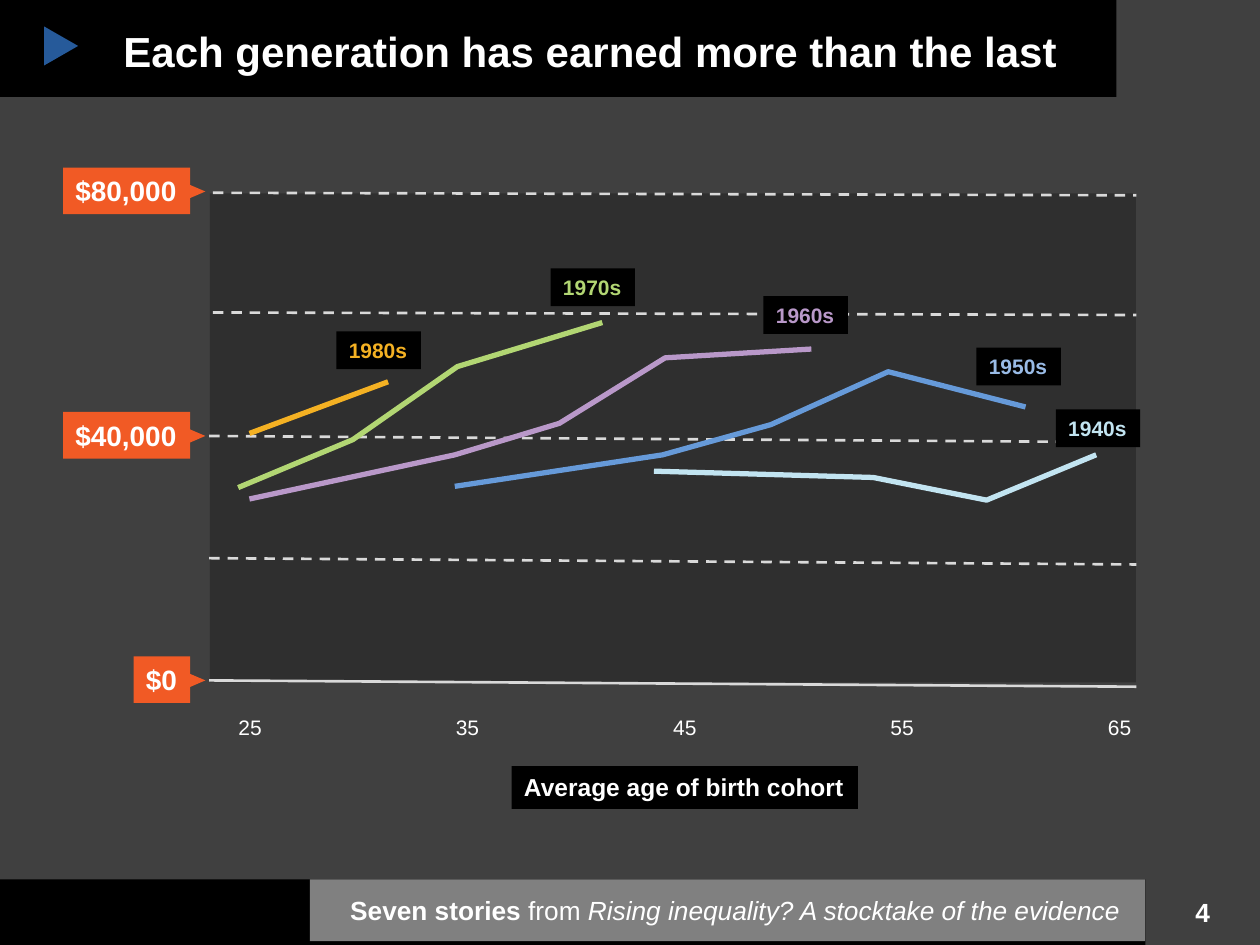
from dataclasses import dataclass

from lxml import etree
from pptx import Presentation
from pptx.dml.color import RGBColor
from pptx.enum.dml import MSO_LINE
from pptx.enum.shapes import MSO_CONNECTOR, MSO_SHAPE
from pptx.enum.text import MSO_ANCHOR, MSO_AUTO_SIZE, PP_ALIGN
from pptx.oxml.ns import qn
from pptx.util import Inches, Pt

LEFT, CENTER, RIGHT = PP_ALIGN.LEFT, PP_ALIGN.CENTER, PP_ALIGN.RIGHT
TOP, MIDDLE = MSO_ANCHOR.TOP, MSO_ANCHOR.MIDDLE
FIT, FIXED = MSO_AUTO_SIZE.SHAPE_TO_FIT_TEXT, MSO_AUTO_SIZE.NONE
RECTANGLE, TRIANGLE = MSO_SHAPE.RECTANGLE, MSO_SHAPE.ISOSCELES_TRIANGLE
STRAIGHT, DASH = MSO_CONNECTOR.STRAIGHT, MSO_LINE.DASH
TITLE_ONLY = 5


@dataclass(frozen=True)
class Theme:
    font: str = "Arial"
    background: str = "404040"
    black: str = "000000"
    white: str = "FFFFFF"
    grid: str = "D9D9D9"
    marker: str = "265A9A"
    value: str = "F15A25"
    footer: str = "808080"
    title_size: int = 24
    value_size: int = 16
    footer_size: int = 15
    axis_size: int = 14
    label_size: int = 12
    grid_width: float = 1.5
    series_width: float = 3


THEME = Theme()

VALUES = [("$40,000", 0.5, 3.27), ("$80,000", 0.5, 1.33), ("$0", 1.06, 5.21)]
GRID = [(1.69, 2.48, 2.5), (1.66, 3.46, 3.51), (1.66, 4.43, 4.48), (1.69, 1.53, 1.55)]
COHORTS = [
    ("1980s", "F4B123", "F4B123", (2.67, 2.63), [(1.98, 3.44), (3.08, 3.03)]),
    ("1970s", "B2D673", "B2D673", (4.37, 2.13),
     [(1.89, 3.87), (2.8, 3.49), (3.63, 2.91), (4.78, 2.56)]),
    ("1960s", "B998C9", "B998C9", (6.06, 2.35),
     [(6.44, 2.77), (5.28, 2.84), (4.44, 3.36), (3.61, 3.61), (1.98, 3.96)]),
    ("1950s", "669AD9", "99BBE6", (7.75, 2.76),
     [(3.61, 3.86), (5.26, 3.61), (6.12, 3.37), (7.05, 2.95), (8.14, 3.23)]),
    ("1940s", "C2E4F1", "C2E4F1", (8.38, 3.25),
     [(5.19, 3.74), (6.93, 3.79), (7.83, 3.97), (8.7, 3.61)]),
]


def write(shape, spans, size, color=THEME.white, bold=False, align=LEFT, anchor=TOP,
          wrap=False, fit=FIT, insets=(0.1, 0.05, 0.1, 0.05), spacing=None):
    frame = shape.text_frame
    frame.word_wrap = wrap
    frame.auto_size = fit
    frame.vertical_anchor = anchor
    (frame.margin_left, frame.margin_top,
     frame.margin_right, frame.margin_bottom) = map(Inches, insets)
    para = frame.paragraphs[0]
    para.alignment = align
    if spacing:
        para.line_spacing = Pt(spacing)
    if isinstance(spans, str):
        spans = [(spans, bold, False)]
    for text, is_bold, is_italic in spans:
        span = para.add_run()
        span.text = text
        span.font.name = THEME.font
        span.font.size = Pt(size)
        span.font.bold = is_bold
        span.font.italic = is_italic
        span.font.color.rgb = RGBColor.from_string(color)


class Page:
    def __init__(self, deck, theme):
        self.theme = theme
        self.slide = deck.slides.add_slide(deck.slide_layouts[TITLE_ONLY])
        self.shapes = self.slide.shapes
        self.paint(self.slide.background, theme.background)

    def paint(self, target, color):
        target.fill.solid()
        target.fill.fore_color.rgb = RGBColor.from_string(color)

    def title(self, text, left, top, width, height):
        box = self.shapes.title
        box.left, box.top, box.width, box.height = map(Inches, (left, top, width, height))
        self.paint(box, self.theme.black)
        write(box, text, self.theme.title_size, bold=True, wrap=True, fit=FIXED,
              insets=(0.98, 0.16, 0.39, 0.16), spacing=32)

    def box(self, left, top, width, height, color, kind=RECTANGLE, rotation=0, opacity=None):
        box = self.shapes.add_shape(kind, *map(Inches, (left, top, width, height)))
        box.shadow.inherit = False
        box.line.fill.background()
        box.rotation = rotation
        self.paint(box, color)
        if opacity is not None:
            tint = box.fill._xPr.find(qn("a:solidFill"))[0]
            etree.SubElement(tint, qn("a:alpha")).set("val", str(opacity * 1000))
        return box

    def text(self, text, left, top, width, height, size, **style):
        box = self.shapes.add_textbox(*map(Inches, (left, top, width, height)))
        write(box, text, size, **style)

    def stroke(self, shape, color, width):
        shape.line.color.rgb = RGBColor.from_string(color)
        shape.line.width = Pt(width)

    def line(self, start, end, color, width, dash=None):
        line = self.shapes.add_connector(STRAIGHT, *map(Inches, (*start, *end)))
        etree.SubElement(line._element.spPr, qn("a:effectLst"))
        self.stroke(line, color, width)
        if dash:
            line.line.dash_style = dash

    def series(self, points, color):
        if len(points) == 2:
            self.line(*points, color, self.theme.series_width)
            return
        start, *rest = [(Inches(x), Inches(y)) for x, y in points]
        builder = self.shapes.build_freeform(*start)
        builder.add_line_segments(rest, close=False)
        curve = builder.convert_to_shape()
        curve.shadow.inherit = False
        curve.fill.background()
        self.stroke(curve, color, self.theme.series_width)

    def value_flag(self, text, left, top):
        flag = self.box(left, top, 1.51 - left, 0.37, self.theme.value)
        write(flag, text, self.theme.value_size, bold=True)
        self.box(1.5, top + 0.12, 0.12, 0.14, self.theme.value, TRIANGLE, 90)


def main():
    deck = Presentation()
    deck.slide_width, deck.slide_height = Inches(10), Inches(7.5)
    page = Page(deck, THEME)

    page.title("Each generation has earned more than the last", 0, 0, 8.86, 0.77)
    page.box(0, 6.98, 9.09, 0.52, THEME.black)
    page.text("4", 9.09, 6.98, 0.91, 0.52, THEME.footer_size, bold=True,
              align=CENTER, anchor=MIDDLE, wrap=True, fit=FIXED)
    page.box(0.33, 0.23, 0.31, 0.27, THEME.marker, TRIANGLE, 90)

    page.box(3.4, -0.2, 3.88, 7.35, THEME.black, rotation=270, opacity=25)
    for left, start, end in GRID:
        page.line((left, start), (9.02, end), THEME.grid, THEME.grid_width, DASH)
    page.line((1.66, 5.4), (9.02, 5.45), THEME.grid, THEME.grid_width)
    for _, color, _, _, points in COHORTS:
        page.series(points, color)

    for value in VALUES:
        page.value_flag(*value)
    for index, age in enumerate(range(25, 66, 10)):
        page.text(str(age), 1.79 + 1.725 * index, 5.62, 0.39, 0.3,
                  THEME.label_size, align=CENTER)
    axis = page.box(4.06, 6.08, 2.75, 0.34, THEME.black)
    write(axis, "Average age of birth cohort", THEME.axis_size, bold=True)
    for name, _, color, corner, _ in COHORTS:
        label = page.box(*corner, 0.67, 0.3, THEME.black)
        write(label, name, THEME.label_size, color=color, bold=True)

    footer = page.box(2.46, 6.98, 6.63, 0.49, THEME.footer)
    write(footer, [("Seven stories ", True, False), ("from ", False, False),
                   ("Rising inequality? A stocktake of the evidence", False, True)],
          THEME.footer_size, align=RIGHT, wrap=True, insets=(0.2, 0.12, 0.2, 0.12))
    deck.save("out.pptx")


if __name__ == "__main__":
    main()
